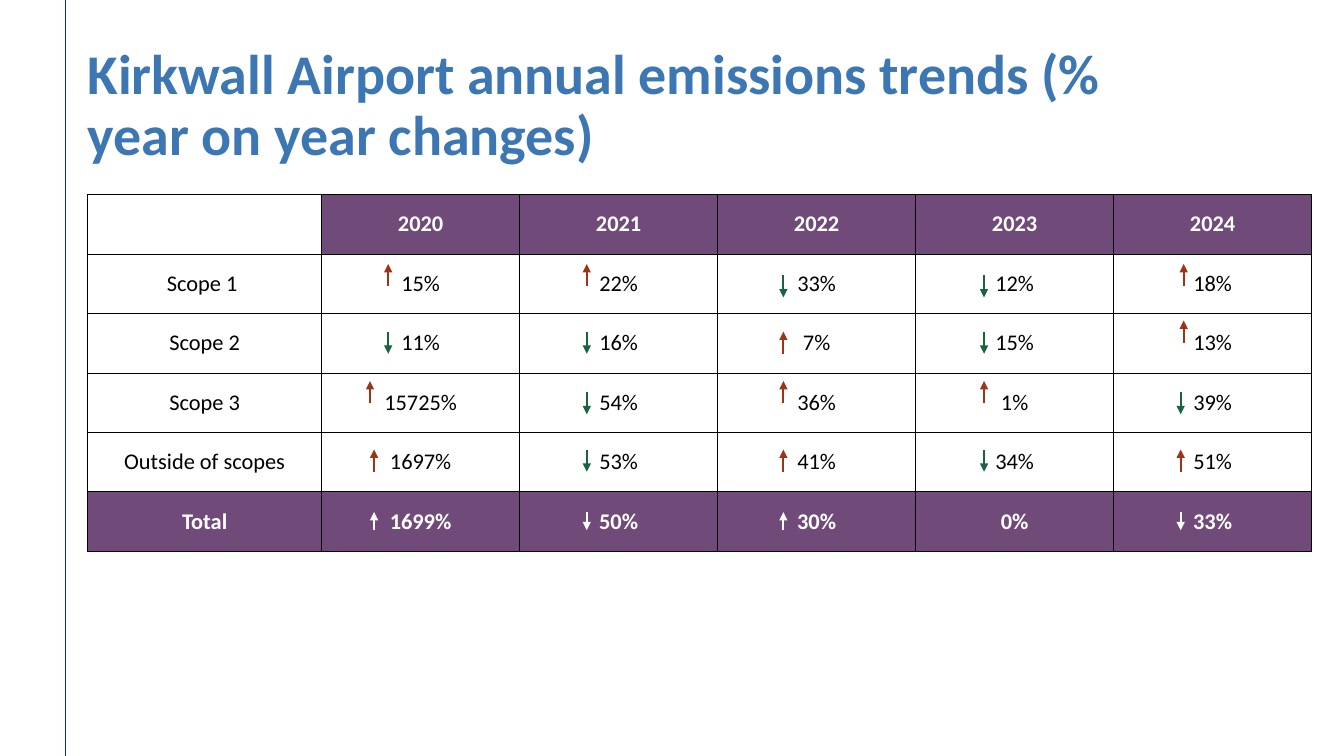
from lxml import etree
from pptx import Presentation
from pptx.dml.color import RGBColor
from pptx.enum.shapes import MSO_CONNECTOR
from pptx.enum.text import MSO_ANCHOR, PP_ALIGN
from pptx.oxml.ns import qn
from pptx.util import Inches, Pt

STRAIGHT = MSO_CONNECTOR.STRAIGHT
MIDDLE, TOP = MSO_ANCHOR.MIDDLE, MSO_ANCHOR.TOP
CENTER, LEFT = PP_ALIGN.CENTER, PP_ALIGN.LEFT

GRID_COLS, GRID_ROWS = 133.3, 75
BLUE, NAVY, PURPLE = "3C77B3", "023671", "704A79"
BLACK, WHITE, RED, GREEN = "000000", "FFFFFF", "9E3316", "17643E"

TITLE = "Kirkwall Airport annual emissions trends (% year on year changes)"
EMISSIONS = [
    ["", "2020", "2021", "2022", "2023", "2024"],
    ["Scope 1 ", "15%", "22%", "33%", "12%", "18%"],
    ["Scope 2", "11%", "16%", "7%", "15%", "13%"],
    ["Scope 3", "15725%", "54%", "36%", "1%", "39%"],
    ["Outside of scopes", "1697%", "53%", "41%", "34%", "51%"],
    ["Total", "1699%", "50%", "30%", "0%", "33%"],
]
TOTAL_ROW = len(EMISSIONS) - 1

TRENDS = ["^^vv^", "vv+v^", "^v^^v", "+v+v+", "+v+ v"]
ARROW_COLS = [38.5, 58.2, 77.7, 97.6, 117.1]
ARROW_ROWS = [27.3, 32.9, 38.9, 44.6, 50.8]
ARROW_SHIFT = {(1, 5): 0.3, (2, 5): 0.3, (3, 1): -1.8, (4, 1): -1.4, (5, 1): -1.4}
RAISED = 1.1


def rgb(value):
    return RGBColor.from_string(value)


class Deck:
    font = "Calibri"

    def __init__(self):
        self.prs = Presentation()
        self.prs.slide_width, self.prs.slide_height = Inches(13.33), Inches(7.5)
        self.s = self.prs.slides.add_slide(self.prs.slide_layouts[6])

    def x(self, cols):
        return round(self.prs.slide_width * cols / GRID_COLS)

    def y(self, rows):
        return round(self.prs.slide_height * rows / GRID_ROWS)

    def text(self, tf, text, size, color, bold, align):
        p = tf.paragraphs[0]
        p.alignment = align
        r = p.add_run()
        r.text = text
        r.font.name, r.font.size, r.font.bold = self.font, Pt(size), bold
        r.font.color.rgb = rgb(color)
        return p

    def title(self, left, top, width, height, text):
        sp = self.s.shapes.add_textbox(self.x(left), self.y(top), self.x(width), self.y(height))
        tf = sp.text_frame
        tf.word_wrap = True
        tf.vertical_anchor = TOP
        tf.margin_left = tf.margin_right = tf.margin_top = tf.margin_bottom = 0
        self.text(tf, text, 40, BLUE, True, LEFT).line_spacing = 0.9

    def line(self, start, end, color, width, arrow=False):
        sp = self.s.shapes.add_connector(
            STRAIGHT, self.x(start[0]), self.y(start[1]), self.x(end[0]), self.y(end[1]))
        sp.line.color.rgb = rgb(color)
        sp.line.width = Pt(width)
        sp_pr = sp._element.spPr
        if arrow:
            etree.SubElement(sp_pr.find(qn("a:ln")), qn("a:tailEnd"), type="triangle")
        etree.SubElement(sp_pr, qn("a:effectLst"))

    def borders(self, cell, color, width):
        tc_pr = cell._tc.get_or_add_tcPr()
        for side in ("lnL", "lnR", "lnT", "lnB"):
            ln = etree.SubElement(tc_pr, qn(f"a:{side}"), w=str(Pt(width)))
            fill = etree.SubElement(ln, qn("a:solidFill"))
            etree.SubElement(fill, qn("a:srgbClr"), val=color)

    def cell(self, cell, text, strong):
        self.borders(cell, BLACK, 0.5)
        cell.margin_left = cell.margin_right = cell.margin_top = cell.margin_bottom = 0
        cell.vertical_anchor = MIDDLE
        if strong:
            cell.fill.solid()
            cell.fill.fore_color.rgb = rgb(PURPLE)
        else:
            cell.fill.background()
        if text:
            self.text(cell.text_frame, text, 16, WHITE if strong else BLACK, strong, CENTER)

    def table(self, left, top, widths, row_height, data):
        frame = self.s.shapes.add_table(
            len(data), len(widths), self.x(left), self.y(top),
            self.x(sum(widths)), self.y(row_height * len(data)))
        tbl = frame.table
        tbl.first_row = tbl.horz_banding = False
        for column, width in zip(tbl.columns, widths):
            column.width = self.x(width)
        for i, values in enumerate(data):
            tbl.rows[i].height = self.y(row_height)
            for j, text in enumerate(values):
                strong = i in (0, TOTAL_ROW) and text != ""
                self.cell(tbl.cell(i, j), text, strong)

    def trend(self, row, col, mark):
        x = ARROW_COLS[col - 1] + ARROW_SHIFT.get((row, col), 0)
        top = ARROW_ROWS[row - 1] - (RAISED if mark == "^" else 0)
        bottom = top + (1.8 if row == TOTAL_ROW else 2.2)
        falling = mark == "v"
        color = GREEN if falling else RED
        if row == TOTAL_ROW:
            color = WHITE
        start, end = (top, bottom) if falling else (bottom, top)
        self.line((x, start), (x, end), color, 1.5, arrow=True)


def main():
    deck = Deck()
    deck.line((6.5, 0), (6.5, GRID_ROWS), NAVY, 1)
    deck.title(8.7, 4.6, 109.6, 10.6, TITLE)
    deck.table(8.7, 19.3, [23.2] + [19.64] * 5, 5.9, EMISSIONS)
    for row, marks in enumerate(TRENDS, 1):
        for col, mark in enumerate(marks, 1):
            if mark != " ":
                deck.trend(row, col, mark)
    deck.prs.save("out.pptx")


if __name__ == "__main__":
    main()
